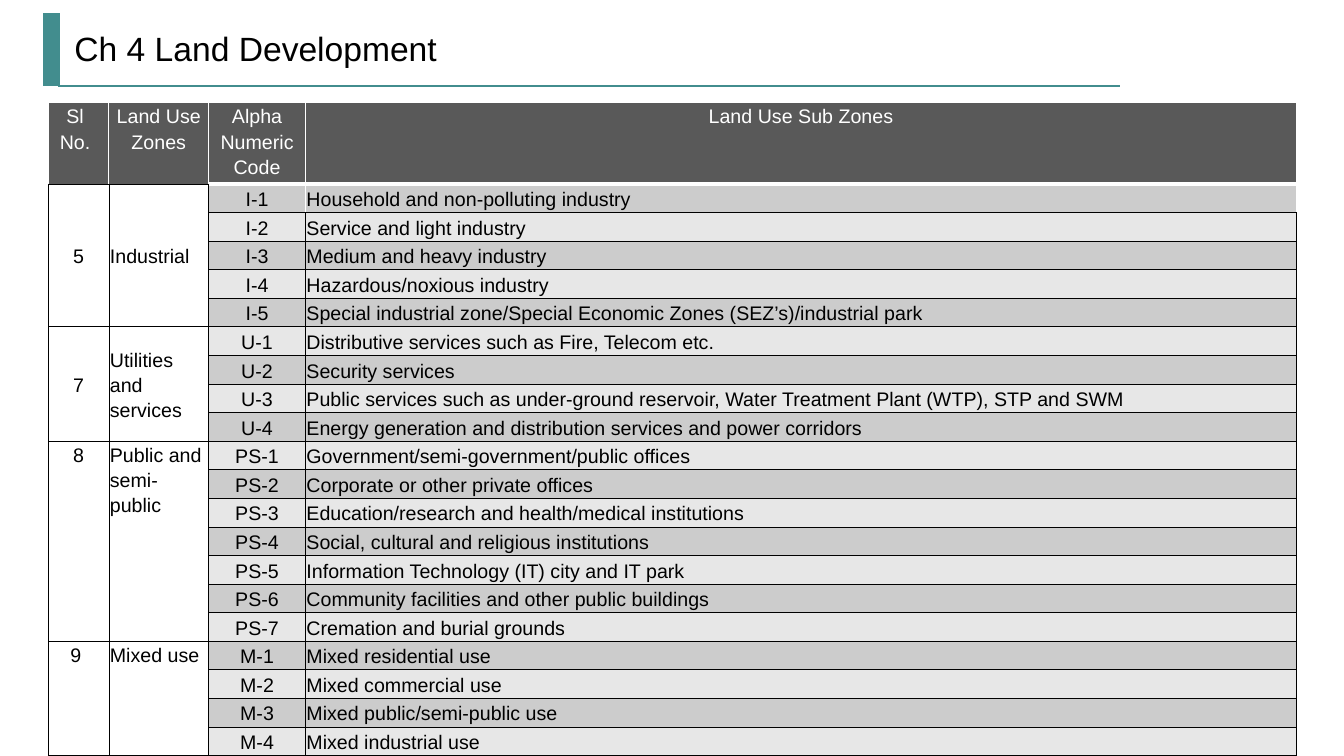
from dataclasses import dataclass

from lxml.etree import SubElement
from pptx import Presentation
from pptx.dml.color import RGBColor
from pptx.enum.shapes import MSO_CONNECTOR
from pptx.enum.text import MSO_ANCHOR, PP_ALIGN
from pptx.oxml.ns import qn
from pptx.slide import Slide
from pptx.table import Table, _Cell
from pptx.text.text import TextFrame
from pptx.util import Inches, Pt


@dataclass(frozen=True)
class Theme:
    """Colours, font and type sizes of the slide."""

    font: str = "Arial"
    title_size: float = 24
    table_size: float = 14
    accent: str = "428D8E"
    ink: str = "000000"
    paper: str = "FFFFFF"
    header: str = "595959"
    bands: tuple[str, str] = ("CCCCCC", "E7E7E7")


@dataclass(frozen=True)
class Rule:
    """A straight accent line, in inches and points."""

    start: tuple[float, float]
    end: tuple[float, float]
    width: float


@dataclass(frozen=True)
class Zone:
    """A land use zone with its coded sub zones."""

    number: str
    name: str
    prefix: str
    anchor: MSO_ANCHOR
    sub_zones: tuple[str, ...]


@dataclass(frozen=True)
class Border:
    """Colour and width in points of one cell edge."""

    color: str
    width: float


THEME = Theme()
THIN = Border(THEME.ink, 0.5)
WHITE = Border(THEME.paper, 1)
THICK_WHITE = Border(THEME.paper, 3)
RULES = (Rule((0.58, 0.85), (11.11, 0.85), 1.5), Rule((0.51, 0.85), (0.51, 0.13), 12))
HEADINGS = ("Sl No.", "Land Use Zones", "Alpha Numeric Code", "Land Use Sub Zones")
COLUMN_WIDTHS = (0.6, 0.99, 0.96, 9.83)
TABLE_HEIGHT = 6.42
HEADER_HEIGHT = 0.75
ZONES = (
    Zone("5", "Industrial", "I", MSO_ANCHOR.MIDDLE, (
        "Household and non-polluting industry",
        "Service and light industry",
        "Medium and heavy industry",
        "Hazardous/noxious industry",
        "Special industrial zone/Special Economic Zones (SEZ’s)/industrial park",
    )),
    Zone("7", "Utilities and services", "U", MSO_ANCHOR.MIDDLE, (
        "Distributive services such as Fire, Telecom etc.",
        "Security services",
        "Public services such as under-ground reservoir, Water Treatment Plant (WTP), STP and SWM",
        "Energy generation and distribution services and power corridors",
    )),
    Zone("8", "Public and semi-public", "PS", MSO_ANCHOR.TOP, (
        "Government/semi-government/public offices",
        "Corporate or other private offices",
        "Education/research and health/medical institutions",
        "Social, cultural and religious institutions",
        "Information Technology (IT) city and IT park",
        "Community facilities and other public buildings",
        "Cremation and burial grounds",
    )),
    Zone("9 ", "Mixed use", "M", MSO_ANCHOR.TOP, (
        "Mixed residential use",
        "Mixed commercial use",
        "Mixed public/semi-public use",
        "Mixed industrial use",
    )),
)


def write_text(frame: TextFrame, text: str, *, size: float = THEME.table_size,
               color: str = THEME.ink, align: PP_ALIGN = PP_ALIGN.LEFT,
               spacing: float = 1.15, before: float = 3, after: float = 6) -> None:
    """Write one formatted paragraph into a text frame."""
    frame.word_wrap = True
    paragraph = frame.paragraphs[0]
    paragraph.alignment = align
    paragraph.line_spacing = spacing
    paragraph.space_before, paragraph.space_after = Pt(before), Pt(after)
    run = paragraph.add_run()
    run.text = text
    run.font.name, run.font.size = THEME.font, Pt(size)
    run.font.color.rgb = RGBColor.from_string(color)


def draw_rule(slide: Slide, rule: Rule) -> None:
    """Draw one accent line without a shadow."""
    connector = slide.shapes.add_connector(
        MSO_CONNECTOR.STRAIGHT, *map(Inches, rule.start + rule.end))
    connector.line.color.rgb = RGBColor.from_string(THEME.accent)
    connector.line.width = Pt(rule.width)
    SubElement(connector._element.spPr, qn("a:effectLst"))


def style_cell(cell: _Cell, fill: str | None, *, left: Border = THIN, right: Border = THIN,
               top: Border = THIN, bottom: Border = THIN) -> None:
    """Set the margins, borders and fill of a cell."""
    cell.margin_left = cell.margin_right = Inches(0.01)
    cell.margin_top = cell.margin_bottom = 0
    properties = cell._tc.get_or_add_tcPr()
    for side, border in zip("LRTB", (left, right, top, bottom)):
        line = SubElement(properties, qn(f"a:ln{side}"), w=str(Pt(border.width)))
        SubElement(SubElement(line, qn("a:solidFill")), qn("a:srgbClr"), val=border.color)
    if fill:
        cell.fill.solid()
        cell.fill.fore_color.rgb = RGBColor.from_string(fill)
    else:
        cell.fill.background()


def fill_header(table: Table) -> None:
    """Fill the heading row."""
    for column, heading in enumerate(HEADINGS):
        cell = table.cell(0, column)
        style_cell(cell, THEME.header, left=WHITE, right=WHITE, top=WHITE,
                   bottom=THIN if column < 2 else THICK_WHITE)
        write_text(cell.text_frame, heading, color=THEME.paper, align=PP_ALIGN.CENTER)
    table.cell(0, 0).margin_right = Inches(0.08)


def fill_zone(table: Table, zone: Zone, first_row: int) -> None:
    """Fill the rows of one zone and merge its number and name cells."""
    for index, sub_zone in enumerate(zone.sub_zones):
        row = first_row + index
        number, name, code, description = (table.cell(row, column) for column in range(4))
        style_cell(number, None)
        style_cell(name, None)
        band = THEME.bands[(row - 1) % 2]
        edge = WHITE if row == 1 else THIN
        style_cell(code, band, top=edge, right=edge)
        style_cell(description, band, left=edge, top=edge, right=edge)
        code.vertical_anchor = description.vertical_anchor = MSO_ANCHOR.MIDDLE
        write_text(code.text_frame, f"{zone.prefix}-{index + 1}", align=PP_ALIGN.CENTER)
        write_text(description.text_frame, sub_zone)
    last_row = first_row + len(zone.sub_zones) - 1
    for column, text, align, after in ((0, zone.number, PP_ALIGN.CENTER, 3),
                                       (1, zone.name, PP_ALIGN.LEFT, 6)):
        cell = table.cell(first_row, column)
        cell.merge(table.cell(last_row, column))
        cell.vertical_anchor = zone.anchor
        write_text(cell.text_frame, text, align=align, after=after)


def draw_table(slide: Slide) -> None:
    """Draw the land use table."""
    body_rows = sum(len(zone.sub_zones) for zone in ZONES)
    table = slide.shapes.add_table(
        body_rows + 1, len(HEADINGS), Inches(0.48), Inches(1.02),
        Inches(sum(COLUMN_WIDTHS)), Inches(TABLE_HEIGHT)).table
    table.first_row = table.horz_banding = False
    for column, width in zip(table.columns, COLUMN_WIDTHS):
        column.width = Inches(width)
    for index, row in enumerate(table.rows):
        row.height = Inches((TABLE_HEIGHT - HEADER_HEIGHT) / body_rows if index else HEADER_HEIGHT)
    fill_header(table)
    first_row = 1
    for zone in ZONES:
        fill_zone(table, zone, first_row)
        first_row += len(zone.sub_zones)


def main() -> None:
    """Build and save the slide."""
    presentation = Presentation()
    presentation.slide_width, presentation.slide_height = Inches(13.33), Inches(7.5)
    slide = presentation.slides.add_slide(presentation.slide_layouts[6])
    for rule in RULES:
        draw_rule(slide, rule)
    title = slide.shapes.add_textbox(Inches(0.64), Inches(0.21), Inches(11.14), Inches(0.59))
    title.text_frame.vertical_anchor = MSO_ANCHOR.MIDDLE
    write_text(title.text_frame, "Ch 4 Land Development", size=THEME.title_size,
               spacing=0.9, before=0, after=0)
    draw_table(slide)
    presentation.save("out.pptx")


if __name__ == "__main__":
    main()
